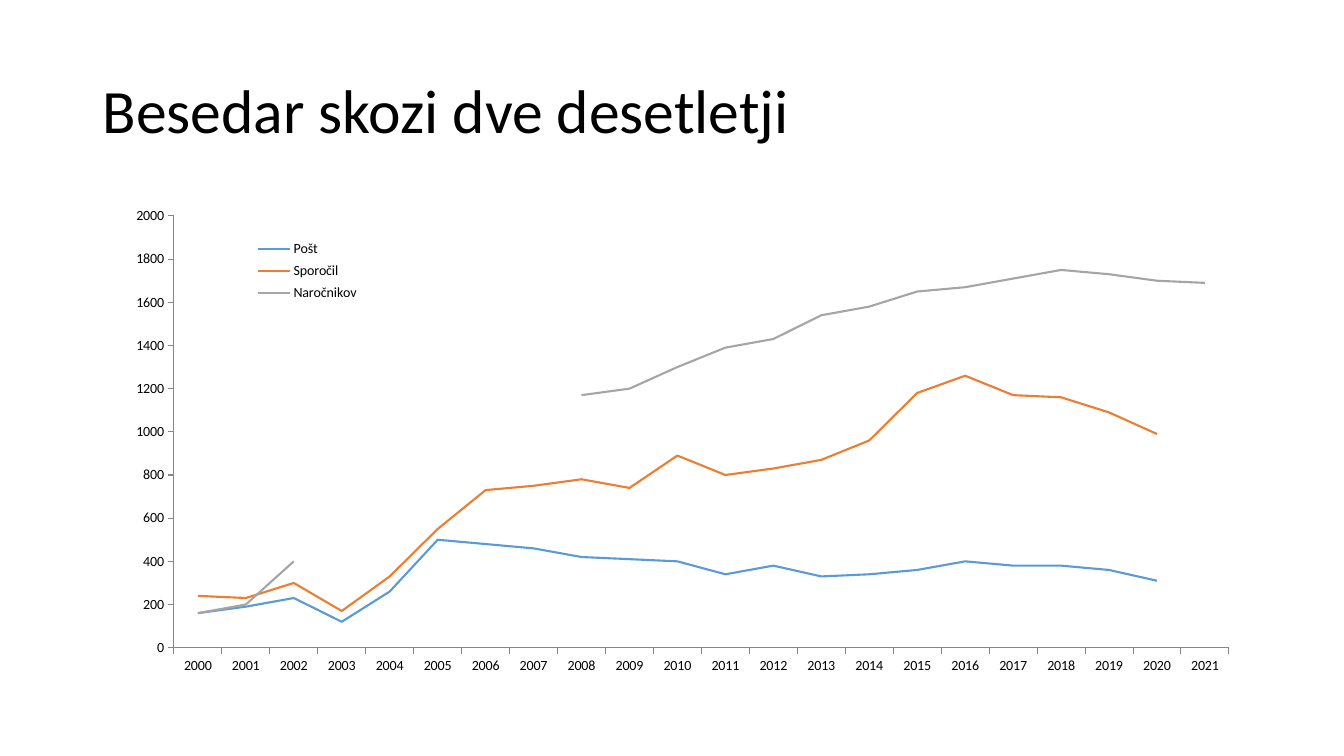
import pptx
import pptx.chart.data
import pptx.dml.color
import pptx.enum.chart
import pptx.enum.text
import pptx.oxml
import pptx.oxml.ns
import pptx.util

Inches = pptx.util.Inches
Pt = pptx.util.Pt


def color(code):
    return pptx.dml.color.RGBColor.from_string(code)


class Deck:
    """Holds the style and the current slide, and adds elements to it."""

    font = "Calibri"
    ink = "000000"
    rule = "868686"

    def __init__(self, wide, high):
        self.prs = pptx.Presentation()
        self.prs.slide_width = Inches(wide)
        self.prs.slide_height = Inches(high)
        self.slide = self.prs.slides.add_slide(self.prs.slide_layouts[6])

    def style(self, font, size):
        font.name = self.font
        font.size = Pt(size)
        font.color.rgb = color(self.ink)

    def title(self, text, box, size):
        frame = self.slide.shapes.add_textbox(*map(Inches, box)).text_frame
        frame.word_wrap = True
        frame.vertical_anchor = pptx.enum.text.MSO_ANCHOR.MIDDLE
        frame.text = text
        para = frame.paragraphs[0]
        para.line_spacing = 0.9
        self.style(para.runs[0].font, size)

    def place(self, spot, inner=False):
        names = pptx.oxml.ns.nsdecls("c")
        target = '<c:layoutTarget val="inner"/>' if inner else ""
        modes = "".join(f'<c:{key}Mode val="edge"/>' for key in "xy")
        sizes = "".join(f'<c:{key} val="{val}"/>' for key, val in zip("xywh", spot))
        return pptx.oxml.parse_xml(
            f"<c:layout {names}><c:manualLayout>{target}{modes}{sizes}"
            "</c:manualLayout></c:layout>"
        )

    def axis(self, axis):
        axis.has_major_gridlines = False
        axis.major_tick_mark = pptx.enum.chart.XL_TICK_MARK.OUTSIDE
        axis.minor_tick_mark = pptx.enum.chart.XL_TICK_MARK.NONE
        axis.format.line.color.rgb = color(self.rule)
        axis.format.line.width = Pt(0.75)

    def lines(self, cats, series, box, plot, key, size):
        data = pptx.chart.data.CategoryChartData()
        data.categories = cats
        for name, tone, vals in series:
            data.add_series(name, vals)
        kind = pptx.enum.chart.XL_CHART_TYPE.LINE
        chart = self.slide.shapes.add_chart(kind, *map(Inches, box), data).chart
        chart.has_title = False
        self.style(chart.font, size)
        chart.plots[0].vary_by_categories = False
        for line, (name, tone, vals) in zip(chart.plots[0].series, series):
            line.smooth = False
            line.marker.style = pptx.enum.chart.XL_MARKER_STYLE.NONE
            line.format.line.color.rgb = color(tone)
            line.format.line.width = Pt(1.5)
        self.axis(chart.category_axis)
        self.axis(chart.value_axis)
        chart.value_axis.minimum_scale = 0
        chart.value_axis.maximum_scale = 2000
        chart.value_axis.major_unit = 200

        area = chart.element.find(".//" + pptx.oxml.ns.qn("c:plotArea"))
        self.fix(area, 0, self.place(plot, True))
        chart.has_legend = True
        chart.legend.position = pptx.enum.chart.XL_LEGEND_POSITION.RIGHT
        chart.legend.include_in_layout = False
        legend = chart.element.find(".//" + pptx.oxml.ns.qn("c:legend"))
        self.fix(legend, 1, self.place(key))
        self.style(chart.legend.font, size)

    def fix(self, part, index, layout):
        for old in part.findall(pptx.oxml.ns.qn("c:layout")):
            part.remove(old)
        part.insert(index, layout)


def main():
    deck = Deck(13.33, 7.5)
    deck.title("Besedar skozi dve desetletji", (0.92, 0.4, 11.5, 1.45), 44)
    years = [str(year) for year in range(2000, 2022)]
    series = [
        ("Pošt", "5B9BD5",
         [160, 190, 230, 120, 260, 500, 480, 460, 420, 410, 400,
          340, 380, 330, 340, 360, 400, 380, 380, 360, 310, None]),
        ("Sporočil", "ED7D31",
         [240, 230, 300, 170, 330, 550, 730, 750, 780, 740, 890,
          800, 830, 870, 960, 1180, 1260, 1170, 1160, 1090, 990, None]),
        ("Naročnikov", "A5A5A5",
         [160, 200, 400] + [None] * 5
         + [1170, 1200, 1300, 1390, 1430, 1540, 1580,
            1650, 1670, 1710, 1750, 1730, 1700, 1690]),
    ]
    deck.lines(years, series, (0.92, 2, 11.5, 4.76),
               plot=(0.07, 0.03, 0.91, 0.9), key=(0.13, 0.07, 0.11, 0.15), size=10)
    deck.prs.save("out.pptx")


if __name__ == "__main__":
    main()
